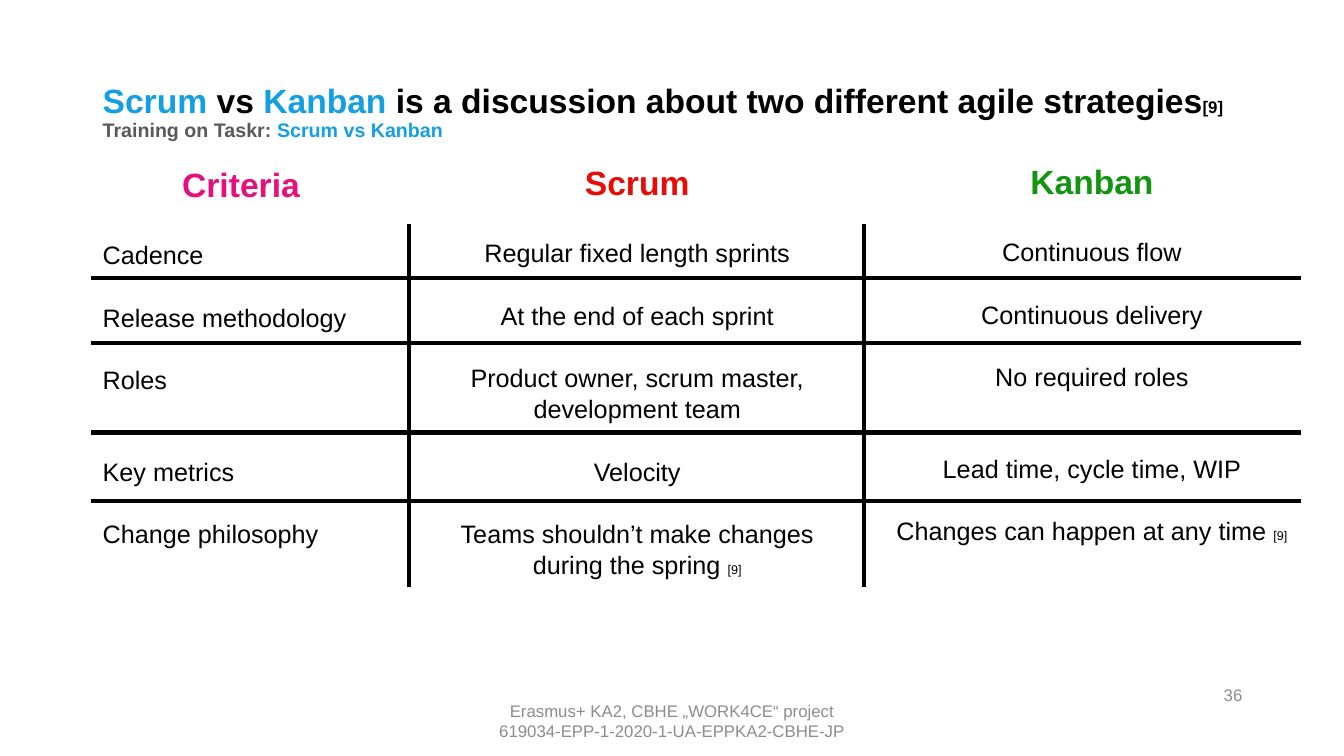
from lxml import etree
from pptx import Presentation
from pptx.dml.color import RGBColor
from pptx.enum.shapes import MSO_CONNECTOR
from pptx.enum.text import MSO_ANCHOR, PP_ALIGN
from pptx.oxml.ns import qn
from pptx.util import Inches, Pt

BLACK = RGBColor(0x00, 0x00, 0x00)
GRAY = RGBColor(0x8C, 0x8C, 0x8C)
DARK_GRAY = RGBColor(0x59, 0x59, 0x59)
BLUE = RGBColor(0x15, 0x9F, 0xE3)
PINK = RGBColor(0xE5, 0x0F, 0x7E)
RED = RGBColor(0xE7, 0x0C, 0x07)
GREEN = RGBColor(0x13, 0x95, 0x11)

REFERENCE = "[9]"
TITLE_LINES = [
    [("Scrum", 24, BLUE), (" vs ", 24, BLACK), ("Kanban", 24, BLUE),
     (" is a discussion about two different agile strategies", 24, BLACK),
     (REFERENCE, 12, BLACK)],
    [("Training on Taskr: ", 14, DARK_GRAY), ("Scrum vs Kanban", 14, BLUE)],
]
# heading, colour, left, top, width, alignment of the entries
COLUMNS = [
    ("Criteria", PINK, 0.92, 1.56, 2.94, PP_ALIGN.LEFT),
    ("Scrum", RED, 4.27, 1.54, 4.1, PP_ALIGN.CENTER),
    ("Kanban", GREEN, 8.78, 1.53, 4.1, PP_ALIGN.CENTER),
]
ROWS = [
    ("Cadence", "Regular fixed length sprints", "Continuous flow"),
    ("Release methodology", "At the end of each sprint", "Continuous delivery"),
    ("Roles", "Product owner, scrum master, development team", "No required roles"),
    ("Key metrics", "Velocity", "Lead time, cycle time, WIP"),
    ("Change philosophy", "Teams shouldn’t make changes during the spring [9]",
     "Changes can happen at any time [9]"),
]
FOOTER_LINES = ["Erasmus+ KA2, CBHE „WORK4CE“ project",
                "619034-EPP-1-2020-1-UA-EPPKA2-CBHE-JP"]
PAGE_NUMBER = "36"

COLUMN_RULES = [4.06, 8.57]
ROW_RULES = [2.76, 3.4, 4.29, 4.97]
RULES_LEFT, RULES_RIGHT = 0.9, 12.9
RULES_TOP, RULES_BOTTOM = 2.22, 5.82

LINE_SPACING = 1.05
HEADING_GAP = 24.1
ENTRY_LINE = 21.7
CHARACTERS_PER_LINE = 36


def add_text_box(slide, left, top, width, height, anchor=MSO_ANCHOR.TOP, wrap=True):
    box = slide.shapes.add_textbox(Inches(left), Inches(top), Inches(width), Inches(height))
    frame = box.text_frame
    frame.word_wrap = wrap
    frame.vertical_anchor = anchor
    return frame


def style(paragraph, size, color, alignment, bold=False):
    paragraph.alignment = alignment
    font = paragraph.font
    font.name, font.size, font.bold = "Arial", Pt(size), bold
    font.color.rgb = color


def add_run(paragraph, text, size, color):
    run = paragraph.add_run()
    run.text = text
    run.font.size = Pt(size)
    run.font.color.rgb = color


def add_title(slide):
    paragraph = add_text_box(slide, 0.92, 0.88, 11.5, 0.49, MSO_ANCHOR.MIDDLE).paragraphs[0]
    style(paragraph, 24, BLACK, PP_ALIGN.LEFT, bold=True)
    paragraph.line_spacing = 0.9
    for number, line in enumerate(TITLE_LINES):
        if number:
            paragraph.add_line_break()
        for text, size, color in line:
            add_run(paragraph, text, size, color)


def line_count(text):
    wording = text.removesuffix(REFERENCE)
    return 2 if len(wording) > CHARACTERS_PER_LINE else 1


def add_column(slide, index):
    heading, color, left, top, width, alignment = COLUMNS[index]
    frame = add_text_box(slide, left, top, width, 4.74)
    paragraph = frame.paragraphs[0]
    paragraph.text = heading
    style(paragraph, 24, color, PP_ALIGN.CENTER, bold=True)
    paragraph.line_spacing = LINE_SPACING
    gap = HEADING_GAP
    for row in ROWS:
        entry = row[index]
        paragraph = frame.add_paragraph()
        style(paragraph, 18, BLACK, alignment)
        paragraph.line_spacing = LINE_SPACING
        paragraph.space_before = Pt(gap)
        wording = entry.removesuffix(REFERENCE)
        add_run(paragraph, wording, 18, BLACK)
        if wording != entry:
            add_run(paragraph, REFERENCE, 9, BLACK)
        # A short entry leaves the room that the longest one in its row takes
        spare_lines = max(map(line_count, row)) - line_count(entry)
        gap = ENTRY_LINE * (1 + spare_lines)


def add_rule(slide, x1, y1, x2, y2):
    rule = slide.shapes.add_connector(
        MSO_CONNECTOR.STRAIGHT, Inches(x1), Inches(y1), Inches(x2), Inches(y2))
    rule.line.color.rgb = BLACK
    rule.line.width = Pt(3)
    etree.SubElement(rule._element.spPr, qn("a:effectLst"))


def add_footer(slide):
    paragraph = add_text_box(slide, 4.84, 6.9, 3.65, 0.5, wrap=False).paragraphs[0]
    paragraph.text = "\v".join(FOOTER_LINES)
    style(paragraph, 12, GRAY, PP_ALIGN.CENTER)
    paragraph = add_text_box(slide, 11.47, 6.69, 0.95, 0.4, MSO_ANCHOR.MIDDLE).paragraphs[0]
    paragraph.text = PAGE_NUMBER
    style(paragraph, 12, GRAY, PP_ALIGN.RIGHT)


def main():
    presentation = Presentation()
    presentation.slide_width = Inches(13.33)
    presentation.slide_height = Inches(7.5)
    slide = presentation.slides.add_slide(presentation.slide_layouts[6])
    add_title(slide)
    for index in range(len(COLUMNS)):
        add_column(slide, index)
    for x in COLUMN_RULES:
        add_rule(slide, x, RULES_TOP, x, RULES_BOTTOM)
    for y in ROW_RULES:
        add_rule(slide, RULES_LEFT, y, RULES_RIGHT, y)
    add_footer(slide)
    presentation.save("out.pptx")


if __name__ == "__main__":
    main()
